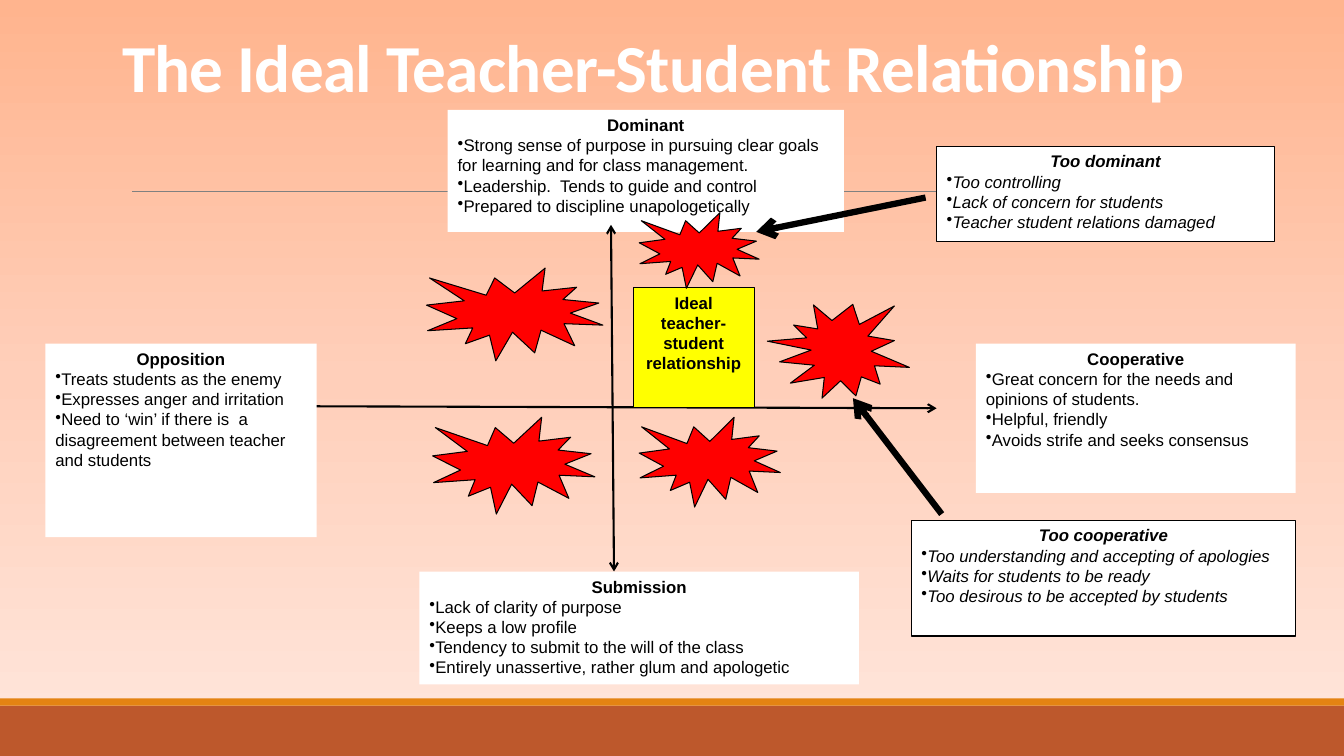
from copy import deepcopy

from pptx import Presentation
from pptx.dml.color import RGBColor
from pptx.enum.shapes import MSO_CONNECTOR, MSO_SHAPE
from pptx.enum.text import MSO_ANCHOR as ANCHOR, MSO_AUTO_SIZE, PP_ALIGN as ALIGN
from pptx.oxml.ns import qn
from pptx.oxml.xmlchemy import OxmlElement
from pptx.util import Inches, Pt

BLACK = RGBColor(0x00, 0x00, 0x00)
WHITE = RGBColor(0xFF, 0xFF, 0xFF)
RED = RGBColor(0xFF, 0x00, 0x00)
YELLOW = RGBColor(0xFF, 0xFF, 0x00)
GRAY = RGBColor(0x80, 0x80, 0x80)
RUST = RGBColor(0xBD, 0x58, 0x2C)
ORANGE = RGBColor(0xE4, 0x83, 0x12)
PEACH = [RGBColor(0xFF, 0xB4, 0x8E), RGBColor(0xFF, 0xCF, 0xBA), RGBColor(0xFF, 0xE7, 0xDD)]


class Diagram:
    """Style and current slide."""

    body_font, body_size = "Arial", 12
    title_font, title_size = "Calibri", 48

    def __init__(self, slide):
        self.s = slide

    def background(self, colors):
        fill = self.s.background.fill
        fill.gradient()
        fill.gradient_angle = 270
        stop_list = next(self.s._element.iter(qn("a:gsLst")))
        while len(stop_list) < len(colors):
            stop_list.append(deepcopy(stop_list[0]))
        for i, (stop, color) in enumerate(zip(fill.gradient_stops, colors)):
            stop.color.rgb = color
            stop.position = i / (len(colors) - 1)

    def run(self, p, text, font, size, color, bold=False, italic=False):
        r = p.add_run()
        r.text = text
        f = r.font
        f.name, f.size, f.bold, f.italic = font, Pt(size), bold, italic
        f.color.rgb = color
        return r

    def title(self, text, x, y, w, h):
        sp = self.s.shapes.title
        sp.left, sp.top, sp.width, sp.height = map(Inches, (x, y, w, h))
        tf = sp.text_frame
        tf.word_wrap = True
        tf.auto_size = MSO_AUTO_SIZE.NONE
        tf.vertical_anchor = ANCHOR.BOTTOM
        p = tf.paragraphs[0]
        p.alignment, p.line_spacing = ALIGN.CENTER, 0.85
        r = self.run(p, text, self.title_font, self.title_size, WHITE, bold=True)
        r._r.get_or_add_rPr().set("spc", "-50")

    def shape(self, x, y, w, h, fill, outlined=False, kind=MSO_SHAPE.RECTANGLE):
        sp = self.s.shapes.add_shape(kind, *map(Inches, (x, y, w, h)))
        sp.shadow.inherit = False
        sp.fill.solid()
        sp.fill.fore_color.rgb = fill
        if outlined:
            sp.line.color.rgb = BLACK
            sp.line.width = Pt(0.75)
        else:
            sp.line.fill.background()
        return sp

    def burst(self, x, y, w, h, rotation=0):
        sp = self.shape(x, y, w, h, RED, True, MSO_SHAPE.EXPLOSION1)
        sp.rotation = rotation

    def box(self, x, y, w, h, heading, items=(), fill=WHITE, outlined=False, italic=False):
        tf = self.shape(x, y, w, h, fill, outlined).text_frame
        tf.word_wrap = True
        tf.vertical_anchor = ANCHOR.TOP
        p = tf.paragraphs[0]
        p.alignment = ALIGN.CENTER
        self.run(p, heading, self.body_font, self.body_size, BLACK, True, italic)
        for item in items:
            p = tf.add_paragraph()
            p.alignment = ALIGN.LEFT
            self.bullet(p)
            self.run(p, item, self.body_font, self.body_size, BLACK, False, italic)

    def bullet(self, p):
        pPr = p._p.get_or_add_pPr()
        pPr.set("marL", "0")
        pPr.set("indent", "0")
        mark = OxmlElement("a:buChar")
        mark.set("char", "•")
        pPr.append(mark)

    def line(self, x1, y1, x2, y2, width, color=BLACK, ends=()):
        c = self.s.shapes.add_connector(MSO_CONNECTOR.STRAIGHT, *map(Inches, (x1, y1, x2, y2)))
        c.line.color.rgb = color
        c.line.width = Pt(width)
        for end in ends:
            arrow = OxmlElement(f"a:{end}")
            arrow.set("type", "arrow")
            c.line._get_or_add_ln().append(arrow)
        c._element.spPr.append(OxmlElement("a:effectLst"))


def main():
    prs = Presentation()
    prs.slide_width, prs.slide_height = Inches(13.33), Inches(7.5)
    d = Diagram(prs.slides.add_slide(prs.slide_layouts[5]))

    # Backdrop and title
    d.background(PEACH)
    d.shape(0, 7, 13.33, 0.5, RUST)
    d.shape(0, 6.93, 13.33, 0.07, ORANGE)
    d.line(1.31, 1.9, 12.21, 1.9, 0.5, GRAY)
    d.title("The Ideal Teacher-Student Relationship", 0.73, 0.09, 11.5, 1.01)

    # Axes and the traits at their ends
    d.box(4.44, 1.09, 3.93, 1.21, "Dominant", [
        "Strong sense of purpose in pursuing clear goals for learning and for class management.",
        "Leadership.  Tends to guide and control",
        "Prepared to discipline unapologetically"])
    both = ("headEnd", "tailEnd")
    d.line(6.06, 2.23, 6.09, 5.67, 1.5, ends=both)
    d.line(2.94, 4.03, 9.29, 4.05, 1.5, ends=both)
    d.box(9.68, 3.41, 3.17, 1.48, "Cooperative", [
        "Great concern for the needs and opinions of students.",
        "Helpful, friendly",
        "Avoids strife and seeks consensus"])
    d.box(0.45, 3.41, 2.69, 1.92, "Opposition", [
        "Treats students as the enemy",
        "Expresses anger and irritation",
        "Need to ‘win’ if there is  a disagreement between teacher and students"])
    d.box(4.16, 5.67, 4.36, 1.12, "Submission", [
        "Lack of clarity of purpose",
        "Keeps a low profile",
        "Tendency to submit to the will of the class",
        "Entirely unassertive, rather glum and apologetic"])

    # Ideal zone
    d.box(6.28, 2.85, 1.2, 1.19, "Ideal teacher- student relationship",
          fill=YELLOW, outlined=True)

    # Excesses, each pointing at its burst
    d.box(9.29, 1.45, 3.35, 0.95, "Too dominant", [
        "Too controlling",
        "Lack of concern for students",
        "Teacher student relations damaged"], outlined=True, italic=True)
    d.burst(6.34, 2.11, 1.19, 0.75)
    d.line(9.18, 1.96, 7.5, 2.3, 4.5, ends=("tailEnd",))
    d.burst(7.85, 2.78, 0.93, 1.41, rotation=90)
    d.box(9.04, 5.16, 3.81, 1.15, "Too cooperative", [
        "Too understanding and accepting of apologies",
        "Waits for students to be ready",
        "Too desirous to be accepted by students"], outlined=True, italic=True)
    d.line(9.34, 5.1, 8.46, 3.95, 4.5, ends=("tailEnd",))

    # Bursts in the other quadrants
    d.burst(4.23, 2.66, 1.75, 0.92)
    d.burst(4.29, 4.14, 1.61, 0.96)
    d.burst(6.34, 4.14, 1.4, 0.89)

    prs.save("out.pptx")


if __name__ == "__main__":
    main()
